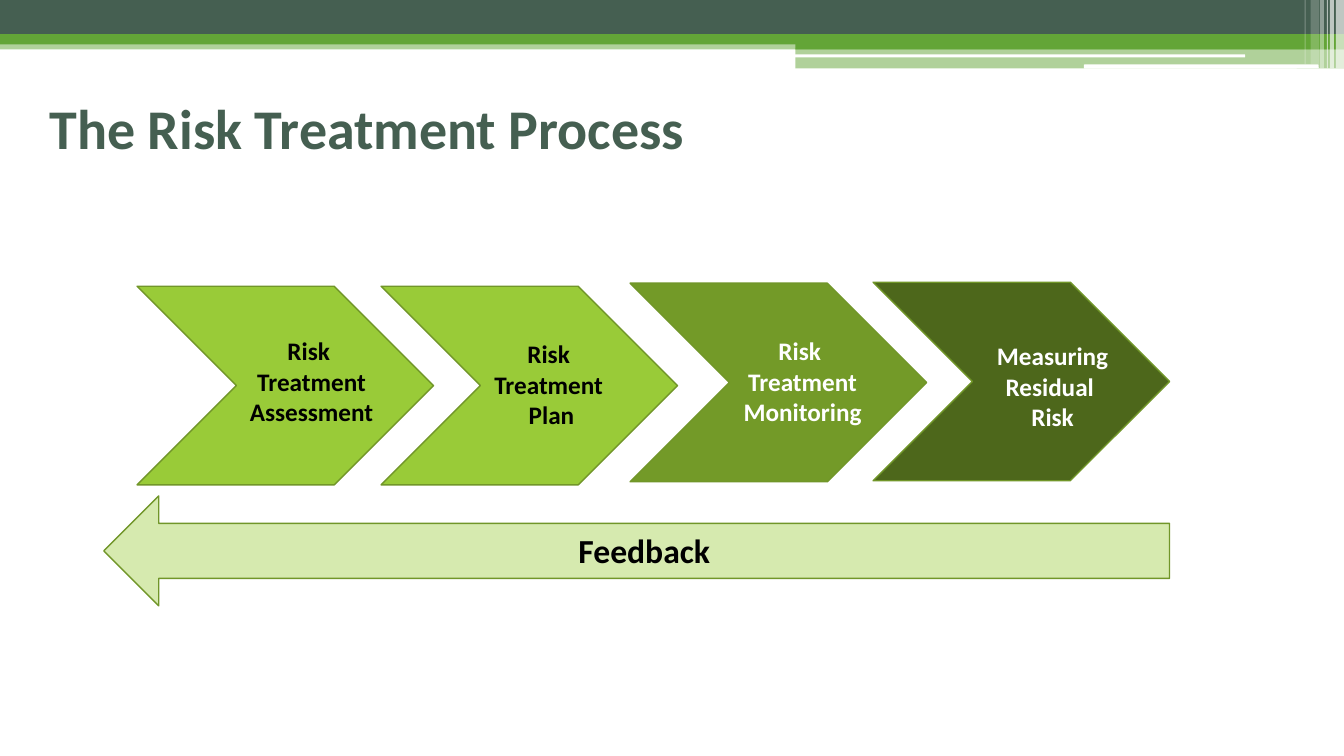
from pptx import Presentation
from pptx import util as u
from pptx.dml.color import RGBColor
from pptx.enum import shapes, text
from pptx.oxml.ns import qn
from lxml import etree

HUES = {
    "slate": "455F51", "green": "63A537", "white": "FFFFFF", "black": "000000",
    "lime": "99CB38", "olive": "739A28", "moss": "4D671B", "pale": "D6EAAF",
    "edge": "719629",
}
KIND = shapes.MSO_SHAPE


def hue(name):
    return RGBColor.from_string(HUES[name])


def write(frame, words, size=18, color="black", align="CENTER", anchor="TOP"):
    frame.word_wrap = True
    frame.vertical_anchor = getattr(text.MSO_ANCHOR, anchor)
    frame.text = words
    for para in frame.paragraphs:
        para.alignment = getattr(text.PP_ALIGN, align)
        for run in para.runs:
            font = run.font
            font.name, font.size, font.bold = "Calibri", u.Pt(size), True
            font.color.rgb = hue(color)


class Page:
    def __init__(self, deck):
        self.slide = deck.slides.add_slide(deck.slide_layouts[5])
        self.items = self.slide.shapes

    def shape(self, kind, box, fill, alpha=100, edge=None):
        item = self.items.add_shape(kind, *map(u.Inches, box))
        item.shadow.inherit = False
        item.fill.solid()
        item.fill.fore_color.rgb = hue(fill)
        if alpha < 100:
            tint = item.fill._xPr.find(".//" + qn("a:srgbClr"))
            etree.SubElement(tint, qn("a:alpha")).set("val", str(alpha * 1000))
        if edge:
            item.line.color.rgb = hue(edge)
            item.line.width = u.Pt(1)
        else:
            item.line.fill.background()
        return item

    def label(self, box, words, **style):
        item = self.items.add_textbox(*map(u.Inches, box))
        write(item.text_frame, words, **style)

    def title(self, box, words, **style):
        item = self.items.title
        item.left, item.top, item.width, item.height = map(u.Inches, box)
        write(item.text_frame, words, **style)


def main():
    deck = Presentation()
    deck.slide_width, deck.slide_height = u.Inches(13.33), u.Inches(7.5)
    page = Page(deck)

    bands = [
        (0, 0.4, 13.33, 0.09, 50, "green"),
        (0, 0, 13.33, 0.34, 100, "slate"),
        (0, 0.34, 13.33, 0.1, 100, "green"),
        (7.89, 0.39, 5.44, 0.1, 100, "green"),
        (7.89, 0.48, 5.44, 0.2, 50, "green"),
    ]
    for *box, alpha, fill in bands:
        page.shape(KIND.RECTANGLE, box, fill, alpha)

    for box in [(7.88, 0.54, 4.47, 0.03), (10.75, 0.64, 2.33, 0.04)]:
        page.shape(KIND.ROUNDED_RECTANGLE, box, "white")

    strips = [
        (13.25, 0.08, 0.68, 65), (13.19, 0.04, 0.68, 65),
        (13.16, 0.01, 0.68, 60), (13.09, 0.04, 0.68, 40),
        (13, 0.08, 0.64, 20), (12.94, 0.01, 0.64, 30),
    ]
    for left, width, height, alpha in strips:
        page.shape(KIND.RECTANGLE, (left, 0, width, height), "white", alpha)

    page.title((0.39, 0.68, 12, 1.17), "The Risk Treatment Process",
               size=40, color="slate", align="LEFT", anchor="MIDDLE")

    steps = [
        (1.36, 2.84, "lime", 2.2, 3.28, "black", "Risk \nTreatment Assessment"),
        (3.78, 2.84, "lime", 4.58, 3.31, "black", "Risk \nTreatment \nPlan"),
        (6.25, 2.81, "olive", 7.07, 3.28, "white", "Risk \nTreatment Monitoring"),
        (8.66, 2.8, "moss", 9.55, 3.33, "white", "Measuring Residual \nRisk"),
    ]
    for left, top, fill, x, y, color, words in steps:
        page.shape(KIND.CHEVRON, (left, top, 2.94, 1.97), fill, edge="edge")
        page.label((x, y, 1.78, 1.01), words, color=color)

    page.shape(KIND.LEFT_ARROW, (1.03, 4.92, 10.57, 1.09), "pale", edge="edge")
    page.label((5.5, 5.21, 1.78, 0.5), "Feedback", size=24)

    deck.save("out.pptx")


if __name__ == "__main__":
    main()
